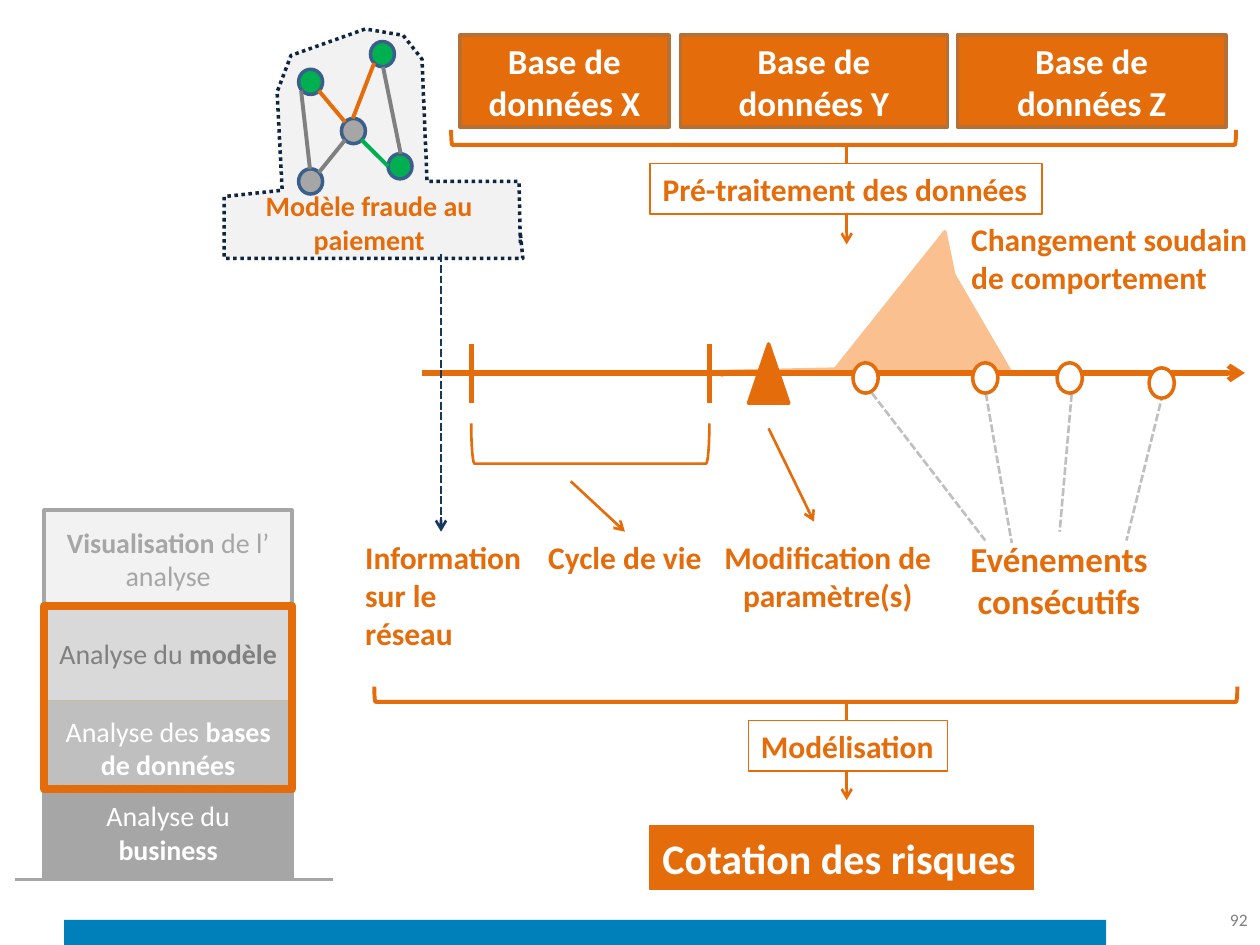
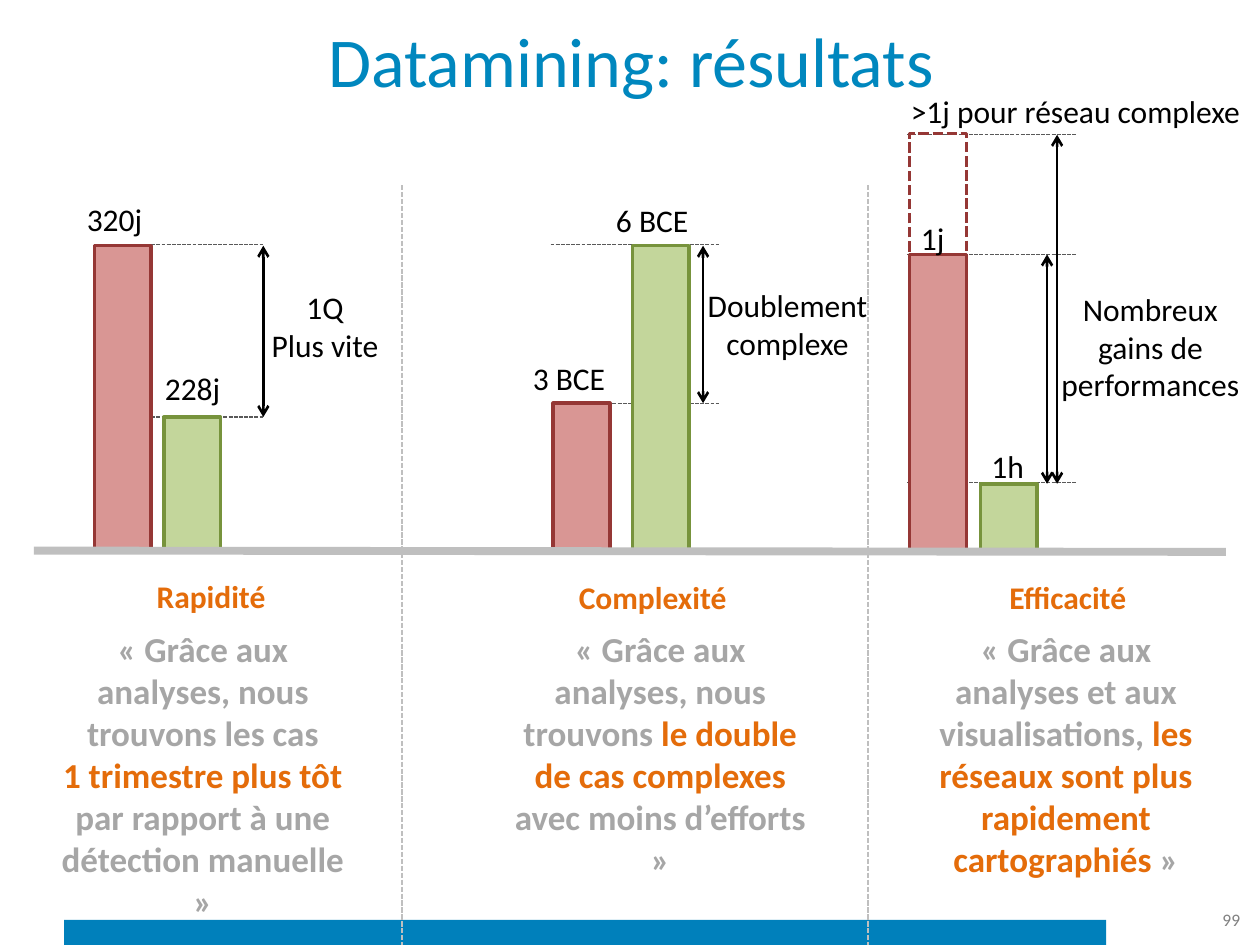
from lxml import etree
from pptx import Presentation
from pptx.dml.color import RGBColor
from pptx.enum import dml, shapes, text
from pptx.oxml.ns import qn
from pptx.util import Inches, Pt

FONT = "Calibri"
ORANGE, PEACH, BLUE, TITLE_BLUE = "E46C0A", "FAC090", "0080BB", "0087BE"
WHITE, BLACK, PALE, LIGHT = "FFFFFF", "000000", "F2F2F2", "D9D9D9"
SILVER, GREY, DARK_GREY, CHARCOAL = "BFBFBF", "A6A6A6", "808080", "595959"
GREEN, NODE_EDGE, NAVY, INK = "00B050", "3A5F8C", "17375E", "0F243E"
SAND, BROWN = "C4BD97", "B76F34"
RED_BAR, GREEN_BAR = ("D99694", "953735"), ("C3D69B", "77933C")

KIND = shapes.MSO_SHAPE
DASH, DOT = dml.MSO_LINE.SQUARE_DOT, dml.MSO_LINE.ROUND_DOT
LEFT, CENTER, RIGHT = text.PP_ALIGN.LEFT, text.PP_ALIGN.CENTER, text.PP_ALIGN.RIGHT
TOP, MIDDLE = text.MSO_ANCHOR.TOP, text.MSO_ANCHOR.MIDDLE

# Slide 1: how the risk score is made
DATABASES = [("Base de données X", 3.65, 1.66), ("Base de données Y", 5.4, 2.12),
             ("Base de données Z", 7.6, 2.13)]
EVENT_LINKS = [((6.92, 3.12), (7.82, 4.29)), ((7.81, 3.04), (8.03, 4.31)),
               ((8.52, 2.96), (8.41, 4.22)), ((9.25, 3.04), (8.94, 4.29))]
EVENTS = [(6.77, 2.88), (7.72, 2.88), (8.39, 2.88), (9.12, 2.92)]
FRAUD_OUTLINE = [(4.13, 1.93), (4.12, 1.44), (3.39, 1.44), (3.35, 0.47), (3.2, 0.28),
                 (2.9, 0.23), (2.31, 0.44), (2.2, 0.73), (2.24, 1.51), (1.78, 1.56),
                 (1.78, 2.05), (4.15, 2.05), (4.13, 1.85)]
BEHAVIOUR_PEAK = [(5.67, 2.95), (6.63, 2.93), (7.5, 1.84), (7.57, 2.18), (8.03, 2.97),
                  (5.73, 2.95), (5.73, 2.98), (5.77, 2.95), (5.75, 2.97)]
NETWORK_NODES = [(2.37, 0.55, GREEN), (2.94, 0.33, GREEN), (3.08, 1.22, GREEN),
                 (2.37, 1.34, GREY), (2.71, 0.94, GREY)]
NETWORK_EDGES = [((3.04, 0.53), (3.18, 1.22), DARK_GREY), ((2.97, 0.5), (2.8, 0.94), ORANGE),
                 ((2.87, 1.11), (3.08, 1.32), GREEN), ((2.74, 1.11), (2.53, 1.37), DARK_GREY),
                 ((2.74, 0.97), (2.53, 0.72), ORANGE), ((2.39, 0.72), (2.46, 1.34), DARK_GREY)]
SIGNALS = [("Modification de paramètre(s)", (5.62, 4.22, 1.9, 0.71), 18, CENTER),
           ("Changement soudain de comportement", (7.61, 1.7, 2.43, 0.71), 18, LEFT),
           ("Evénements consécutifs", (7.2, 4.22, 2.41, 0.77), 20, CENTER),
           ("Modèle fraude au paiement", (1.71, 1.45, 2.44, 0.64), 16, CENTER),
           ("Information sur le réseau", (2.8, 4.22, 1.51, 1.01), 18, LEFT)]
STEPS = [("Pré-traitement des données", (5.16, 1.3, 3.11, 0.4), (3.58, 1.03, 6.23, 0.12), 1.15),
         ("Modélisation", (5.94, 5.72, 1.58, 0.4), (2.97, 5.45, 6.85, 0.12), 5.56)]
LAYERS = [
    (4.06, PALE, SAND, [("Visualisation ", GREY, True), ("de l’ analyse", GREY, False)]),
    (4.81, LIGHT, SAND, [("Analyse du ", DARK_GREY, False), ("modèle", DARK_GREY, True)]),
    (5.56, SILVER, SAND, [("Analyse des ", WHITE, False), ("bases de données", WHITE, True)]),
    (6.23, GREY, SILVER, [("Analyse du ", WHITE, False), ("business", WHITE, True)]),
]

# Slide 2: three results, each with a pair of bars
BASELINE = 4.37
BAR_WIDTH = 0.45
BARS = [(0.75, 1.95, RED_BAR), (1.3, 3.31, GREEN_BAR), (4.39, 3.2, RED_BAR),
        (5.02, 1.95, GREEN_BAR), (7.22, 2.02, RED_BAR), (7.78, 3.84, GREEN_BAR)]
LEVELS = [(0.75, 1.94), (0.75, 3.31), (4.37, 1.94), (4.37, 3.2),
          (7.2, 1.07), (7.2, 2.02), (7.2, 3.83)]
GAPS = [(2.09, 1.95, 3.31), (5.58, 1.95, 3.2), (8.31, 2.02, 3.84), (8.39, 1.07, 3.84)]
BAR_LABELS = [("320j", (0.59, 1.54, 0.65, 0.4)), ("228j", (1.21, 2.88, 0.65, 0.4)),
              ("3 BCE", (4.13, 2.8, 0.78, 0.4)), ("6 BCE", (4.79, 1.55, 0.78, 0.4)),
              ("1j", (7.21, 1.69, 0.39, 0.4)), ("1h", (7.77, 3.5, 0.46, 0.4)),
              (">1j pour réseau complexe", (7.13, 0.68, 2.91, 0.4))]
GAIN_LABELS = [("1Q\nPlus vite", (2.05, 2.24, 1.06, 0.71)),
               ("Doublement\ncomplexe", (5.49, 2.22, 1.52, 0.71)),
               ("Nombreux gains de performances", (8.29, 2.25, 1.68, 1.01))]
RESULTS = [
    ("Rapidité", (1.14, 4.53, 1.07, 0.4), 0.35,
     [[("« Grâce aux analyses, nous trouvons les cas", GREY, True)],
      [("1 trimestre plus tôt ", ORANGE, True),
       ("par rapport à une détection manuelle »", GREY, True)]]),
    ("Complexité", (4.49, 4.54, 1.38, 0.4), 3.98,
     [[("« Grâce aux analyses, nous trouvons ", GREY, True),
       ("le double de cas complexes ", ORANGE, True), ("avec moins d’efforts »", GREY, True)]]),
    ("Efficacité", (7.9, 4.54, 1.15, 0.4), 7.2,
     [[("« Grâce aux analyses et aux visualisations, ", GREY, True),
       ("les réseaux sont plus rapidement cartographiés", ORANGE, True), (" »", GREY, True)]]),
]


def rgb(color):
    return RGBColor.from_string(color)


def paint(shape, fill, line, width, dash=None):
    shape.shadow.inherit = False
    if fill:
        shape.fill.solid()
        shape.fill.fore_color.rgb = rgb(fill)
    else:
        shape.fill.background()
    if line:
        shape.line.color.rgb = rgb(line)
        shape.line.width = Pt(width)
        if dash:
            shape.line.dash_style = dash
    else:
        shape.line.fill.background()


def add_box(parent, at, fill=None, line=None, width=2, dash=None, kind=KIND.RECTANGLE):
    shape = parent.shapes.add_shape(kind, *map(Inches, at))
    paint(shape, fill, line, width, dash)
    return shape


def add_outline(slide, points, fill, line, width, dash=None):
    start, *rest = [tuple(map(Inches, point)) for point in points]
    builder = slide.shapes.build_freeform(*start)
    builder.add_line_segments(rest, close=False)
    paint(builder.convert_to_shape(), fill, line, width, dash)


def add_line(parent, start, end, color, width, dash=None, head=False, tail=False):
    line = parent.shapes.add_connector(shapes.MSO_CONNECTOR.STRAIGHT,
                                       *map(Inches, (*start, *end)))
    line.line.color.rgb = rgb(color)
    line.line.width = Pt(width)
    if dash:
        line.line.dash_style = dash
    for wanted, tag in ((head, "a:headEnd"), (tail, "a:tailEnd")):
        if wanted:
            etree.SubElement(line.line._get_or_add_ln(), qn(tag), type="arrow")
    etree.SubElement(line._element.spPr, qn("a:effectLst"))
    return line


def write(shape, paragraphs, size, align=CENTER, anchor=MIDDLE, wrap=True):
    """Fill a shape with paragraphs, each a list of (text, colour, bold) runs."""
    frame = shape.text_frame
    frame.word_wrap = wrap
    frame.vertical_anchor = anchor
    for index, runs in enumerate(paragraphs):
        paragraph = frame.add_paragraph() if index else frame.paragraphs[0]
        paragraph.alignment = align
        paragraph.font.name = FONT
        paragraph.font.size = Pt(size)
        same = len({run[1:] for run in runs}) == 1
        for words, color, bold in runs:
            run = paragraph.add_run()
            run.text = words
            font = paragraph.font if same else run.font
            font.color.rgb = rgb(color)
            font.bold = bold


def plain(words, color, bold):
    return [[(line, color, bold)] for line in words.split("\n")]


def add_label(slide, at, paragraphs, size=18, align=CENTER, anchor=TOP, wrap=True):
    label = slide.shapes.add_textbox(*map(Inches, at))
    write(label, paragraphs, size, align, anchor, wrap)
    return label


def add_bracket(slide, at, width):
    """Draw a bracket that opens upwards and covers the area given."""
    left, top, span, depth = at
    frame = (left + (span - depth) / 2, top + (depth - span) / 2, depth, span)
    add_box(slide, frame, None, ORANGE, width, kind=KIND.RIGHT_BRACKET).rotation = 90


def start_slide(presentation, number, number_left):
    slide = presentation.slides.add_slide(presentation.slide_layouts[6])
    add_box(slide, (0.51, 7.3, 8.27, 0.2), BLUE)
    add_label(slide, (number_left, 7.1, 0.82, 0.4), plain(number, DARK_GREY, False),
              10, RIGHT, MIDDLE)
    return slide


def add_network(slide):
    network = slide.shapes.add_group_shape()
    for left, top, color in NETWORK_NODES:
        add_box(network, (left, top, 0.19, 0.2), color, NODE_EDGE, kind=KIND.OVAL)
    for start, end, color in NETWORK_EDGES:
        add_line(network, start, end, color, 2.25)


def add_timeline(slide):
    add_line(slide, (3.35, 2.96), (9.88, 2.96), ORANGE, 3, tail=True)
    for x in (3.74, 5.63):
        add_line(slide, (x, 2.73), (x, 3.2), ORANGE, 3)
    for left, top in EVENTS:
        add_box(slide, (left, top, 0.2, 0.24), WHITE, ORANGE, kind=KIND.OVAL)
    add_box(slide, (5.94, 2.73, 0.32, 0.47), ORANGE, ORANGE, kind=KIND.ISOSCELES_TRIANGLE)
    add_bracket(slide, (3.74, 3.36, 1.89, 0.32), 1.5)
    add_line(slide, (6.1, 3.4), (6.46, 4.14), ORANGE, 1.5, tail=True)
    cycle = add_label(slide, (4.13, 4.22, 1.66, 0.4), plain("Cycle de vie", ORANGE, True))
    add_line(slide, (4.53, 3.82), (4.96, 4.22), ORANGE, 1.5, tail=True).end_connect(cycle, 0)


def add_layers(slide):
    add_line(slide, (0.12, 6.98), (2.64, 6.98), GREY, 2.25)
    for top, fill, line, runs in LAYERS:
        layer = add_box(slide, (0.35, top, 1.97, 0.75), fill, line, 0.75, DASH)
        write(layer, [runs], 16)
    add_box(slide, (0.35, 4.05, 1.97, 2.93), None, GREY, 2)
    add_box(slide, (0.35, 4.81, 1.97, 1.45), None, ORANGE, 4.5)


def build_scoring(presentation):
    slide = start_slide(presentation, "92", 9.18)
    for start, end in EVENT_LINKS:
        add_line(slide, start, end, SILVER, 1.5, DASH)
    add_outline(slide, FRAUD_OUTLINE, PALE, INK, 2, DOT)
    add_outline(slide, BEHAVIOUR_PEAK, PEACH, PEACH, 2)
    for name, left, width in DATABASES:
        database = add_box(slide, (left, 0.28, width, 0.73), ORANGE, BROWN)
        write(database, plain(name, WHITE, True), 20)
    add_timeline(slide)
    for name, at, bracket, arrow_top in STEPS:
        add_bracket(slide, bracket, 2.25)
        add_line(slide, (6.72, arrow_top), (6.72, arrow_top + 0.79), ORANGE, 1.5, tail=True)
        step = add_box(slide, at, WHITE, ORANGE, 0.75)
        write(step, plain(name, ORANGE, True), 18, LEFT, wrap=False)
    score = add_box(slide, (5.16, 6.55, 3.04, 0.51), ORANGE, ORANGE, 0.75)
    write(score, plain("Cotation des risques", WHITE, True), 24, LEFT, wrap=False)
    add_network(slide)
    for name, at, size, align in SIGNALS:
        add_label(slide, at, plain(name, ORANGE, True), size, align)
    add_line(slide, (3.5, 2.02), (3.5, 4.22), NAVY, 1.5, DASH, tail=True)
    add_layers(slide)


def build_results(presentation):
    slide = start_slide(presentation, "99", 9.12)
    add_label(slide, (0.51, -0.03, 9, 1.01),
              plain("Datamining: résultats", TITLE_BLUE, False), 40, anchor=MIDDLE)
    for left, y in LEVELS:
        add_line(slide, (left, y), (left + 1.34, y), CHARCOAL, 0.75, DASH)
    add_box(slide, (7.22, 1.06, BAR_WIDTH, 1.16), None, RED_BAR[1], 2, DASH)
    for left, top, (fill, line) in BARS:
        add_box(slide, (left, top, BAR_WIDTH, BASELINE - top), fill, line)
    for x in (3.19, 6.89):
        add_line(slide, (x, 1.47), (x, 7.5), SILVER, 1, DASH)
    add_line(slide, (0.27, BASELINE), (9.73, BASELINE + 0.01), SILVER, 4.5)
    for x, top, bottom in GAPS:
        add_line(slide, (x, top), (x, bottom), BLACK, 1.5, head=True, tail=True)
    for words, at in BAR_LABELS:
        add_label(slide, at, plain(words, BLACK, False), align=LEFT, wrap=False)
    for words, at in GAIN_LABELS:
        add_label(slide, at, plain(words, BLACK, False))
    for heading, at, left, quote in RESULTS:
        add_label(slide, at, plain(heading, ORANGE, True), wrap=False)
        add_label(slide, (left, 4.93, 2.52, 2.12), quote, 20)


def main():
    presentation = Presentation()
    presentation.slide_width = Inches(10)
    presentation.slide_height = Inches(7.5)
    build_scoring(presentation)
    build_results(presentation)
    presentation.save("out.pptx")


if __name__ == "__main__":
    main()
